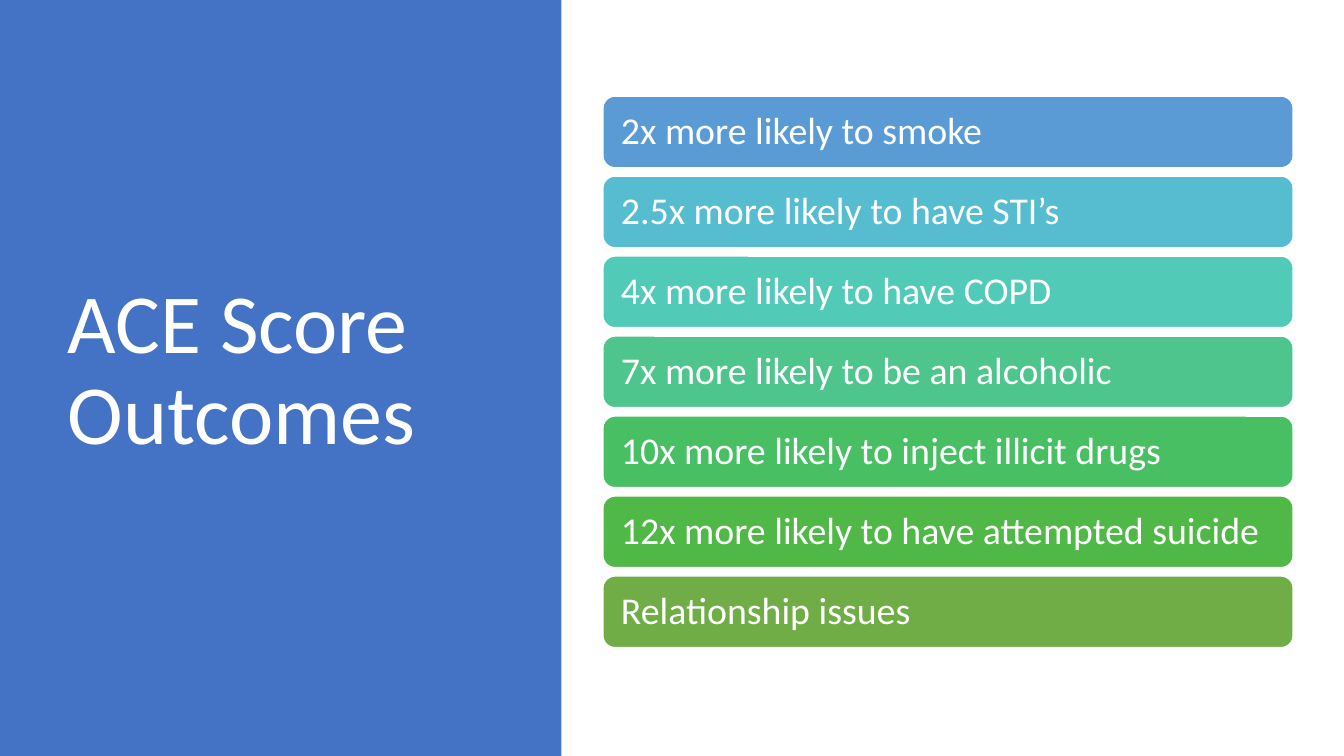
from pptx import Presentation
from pptx.dml.color import RGBColor
from pptx.enum.shapes import MSO_SHAPE as Kind
from pptx.enum.text import MSO_ANCHOR as Anchor, MSO_AUTO_SIZE as Fit, PP_ALIGN as Align
from pptx.util import Pt

FONT = "Calibri"
COLORS = {"panel": "4472C4", "white": "FFFFFF", "blue": "5B9BD5", "sky": "56BCD0",
          "teal": "52CAB8", "mint": "4DC58D", "green": "49BF64", "leaf": "50B846",
          "moss": "70AD47"}
RISKS = [
    ("2x more likely to smoke", "blue"),
    ("2.5x more likely to have STI’s", "sky"),
    ("4x more likely to have COPD", "teal"),
    ("7x more likely to be an alcoholic", "mint"),
    ("10x more likely to inject illicit drugs", "green"),
    ("12x more likely to have attempted suicide", "leaf"),
    ("Relationship issues", "moss"),
]


def paint(name):
    return RGBColor.from_string(COLORS[name])


def write(shape, text, size, inset):
    frame = shape.text_frame
    frame.word_wrap = True
    frame.auto_size = Fit.NONE
    frame.vertical_anchor = Anchor.MIDDLE
    frame.margin_left = frame.margin_right = Pt(inset[0])
    frame.margin_top = frame.margin_bottom = Pt(inset[1])
    para = frame.paragraphs[0]
    para.alignment = Align.LEFT
    para.line_spacing = 0.9
    run = para.add_run()
    run.text = text
    run.font.name = FONT
    run.font.size = Pt(size)
    run.font.color.rgb = paint("white")


def block(shapes, kind, box, color):
    shape = shapes.add_shape(kind, *map(Pt, box))
    shape.shadow.inherit = False
    shape.fill.solid()
    shape.fill.fore_color.rgb = paint(color)
    return shape


def draw_panel(slide, box):
    left, top, width, height = box
    panel = block(slide.shapes, Kind.RECTANGLE, box, "panel")
    panel.line.fill.background()
    title = slide.shapes.title
    title.left, title.top = Pt(left + 41), Pt(top + 49)
    title.width, title.height = Pt(width - 101.5), Pt(height - 106.5)
    title.element.addprevious(panel.element)
    write(title, "ACE Score Outcomes", 60, (7.2, 3.6))


def draw_risks(slide, box, gap):
    left, top, width, height = box
    tall = (height - gap * (len(RISKS) - 1)) / len(RISKS)
    group = slide.shapes.add_group_shape()
    for row, (text, color) in enumerate(RISKS):
        spot = (left, top + row * (tall + gap), width, tall)
        bar = block(group.shapes, Kind.ROUNDED_RECTANGLE, spot, color)
        bar.line.color.rgb = paint("white")
        bar.line.width = Pt(1)
        write(bar, text, 27, (10.4, 8))


def main():
    deck = Presentation()
    deck.slide_width, deck.slide_height = Pt(960), Pt(540)
    slide = deck.slides.add_slide(deck.slide_layouts[5])
    draw_panel(slide, (0, 0, 401, 540))
    draw_risks(slide, (430.7, 68.7, 493, 393.9), 6)
    deck.save("out.pptx")


if __name__ == "__main__":
    main()
